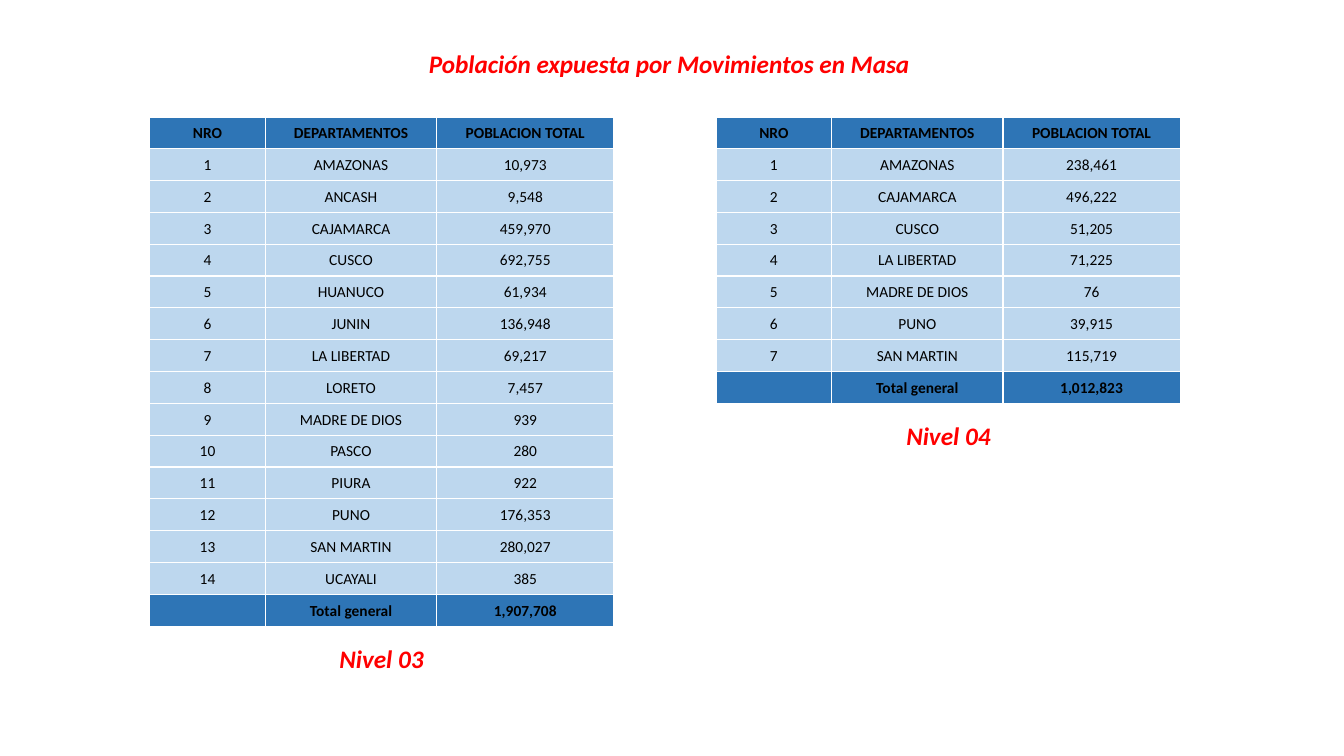
from lxml import etree
from pptx import Presentation
from pptx.dml.color import RGBColor
from pptx.enum import text
from pptx.oxml import ns
from pptx.util import Pt

RED = RGBColor(0xFF, 0x00, 0x00)
BLACK = RGBColor(0x00, 0x00, 0x00)
WHITE = RGBColor(0xFF, 0xFF, 0xFF)
DARK_BLUE = RGBColor(0x2E, 0x75, 0xB6)
LIGHT_BLUE = RGBColor(0xBD, 0xD7, 0xEE)

HEADER = ("NRO", "DEPARTAMENTOS", "POBLACION TOTAL")
COL_WIDTHS = (82.5, 122.5, 126.5)
ROW_HEIGHT = 22.75
TABLE_TOP = 83.5

LEVEL_3 = [
    ("AMAZONAS", "10,973"), ("ANCASH", "9,548"), ("CAJAMARCA", "459,970"),
    ("CUSCO", "692,755"), ("HUANUCO", "61,934"), ("JUNIN", "136,948"),
    ("LA LIBERTAD", "69,217"), ("LORETO", "7,457"), ("MADRE DE DIOS", "939"),
    ("PASCO", "280"), ("PIURA", "922"), ("PUNO", "176,353"),
    ("SAN MARTIN", "280,027"), ("UCAYALI", "385"),
]
LEVEL_4 = [
    ("AMAZONAS", "238,461"), ("CAJAMARCA", "496,222"), ("CUSCO", "51,205"),
    ("LA LIBERTAD", "71,225"), ("MADRE DE DIOS", "76"), ("PUNO", "39,915"),
    ("SAN MARTIN", "115,719"),
]


def style_paragraph(p, size, color, bold, italic=False):
    p.alignment = text.PP_ALIGN.CENTER
    f = p.font
    f.name, f.size, f.bold, f.italic = "Calibri", Pt(size), bold, italic
    f.color.rgb = color


def add_heading(s, words, left, top, width, wrap=True):
    tf = s.shapes.add_textbox(Pt(left), Pt(top), Pt(width), Pt(29)).text_frame
    tf.word_wrap = wrap
    tf.auto_size = text.MSO_AUTO_SIZE.SHAPE_TO_FIT_TEXT
    p = tf.paragraphs[0]
    p.text = words
    style_paragraph(p, 18, RED, True, True)


def add_borders(cell):
    tcPr = cell._tc.get_or_add_tcPr()
    for side in ("a:lnL", "a:lnR", "a:lnT", "a:lnB"):
        ln = etree.SubElement(tcPr, ns.qn(side), w=str(Pt(1)))
        fill = etree.SubElement(ln, ns.qn("a:solidFill"))
        etree.SubElement(fill, ns.qn("a:srgbClr"), val=str(WHITE))


def fill_cell(cell, words, strong):
    add_borders(cell)
    cell.fill.solid()
    cell.fill.fore_color.rgb = DARK_BLUE if strong else LIGHT_BLUE
    cell.vertical_anchor = text.MSO_ANCHOR.MIDDLE
    cell.margin_left = cell.margin_right = cell.margin_top = Pt(0.7)
    cell.margin_bottom = 0
    p = cell.text_frame.paragraphs[0]
    if words:
        p.text = words
    style_paragraph(p, 11, BLACK, strong)


def add_population_table(s, left, departments, total):
    body = [(str(n), *d) for n, d in enumerate(departments, 1)]
    rows = [HEADER, *body, ("", "Total general", total)]
    table = s.shapes.add_table(
        len(rows), len(HEADER), Pt(left), Pt(TABLE_TOP),
        Pt(sum(COL_WIDTHS)), Pt(ROW_HEIGHT * len(rows))).table
    table.first_row = table.horz_banding = False
    for col, width in zip(table.columns, COL_WIDTHS):
        col.width = Pt(width)
    for i, row in enumerate(rows):
        table.rows[i].height = Pt(ROW_HEIGHT)
        for j, words in enumerate(row):
            fill_cell(table.cell(i, j), words, i in (0, len(rows) - 1))


def main():
    prs = Presentation()
    prs.slide_width, prs.slide_height = Pt(960), Pt(540)
    s = prs.slides.add_slide(prs.slide_layouts[6])

    # Title
    add_heading(s, "Población expuesta por Movimientos en Masa", 297, 31, 362, wrap=False)

    # Level 3 on the left
    add_population_table(s, 107, LEVEL_3, "1,907,708")
    add_heading(s, "Nivel 03", 233, 456, 79)

    # Level 4 on the right
    add_population_table(s, 511.5, LEVEL_4, "1,012,823")
    add_heading(s, "Nivel 04", 638, 296.5, 79)

    prs.save("out.pptx")


if __name__ == "__main__":
    main()
